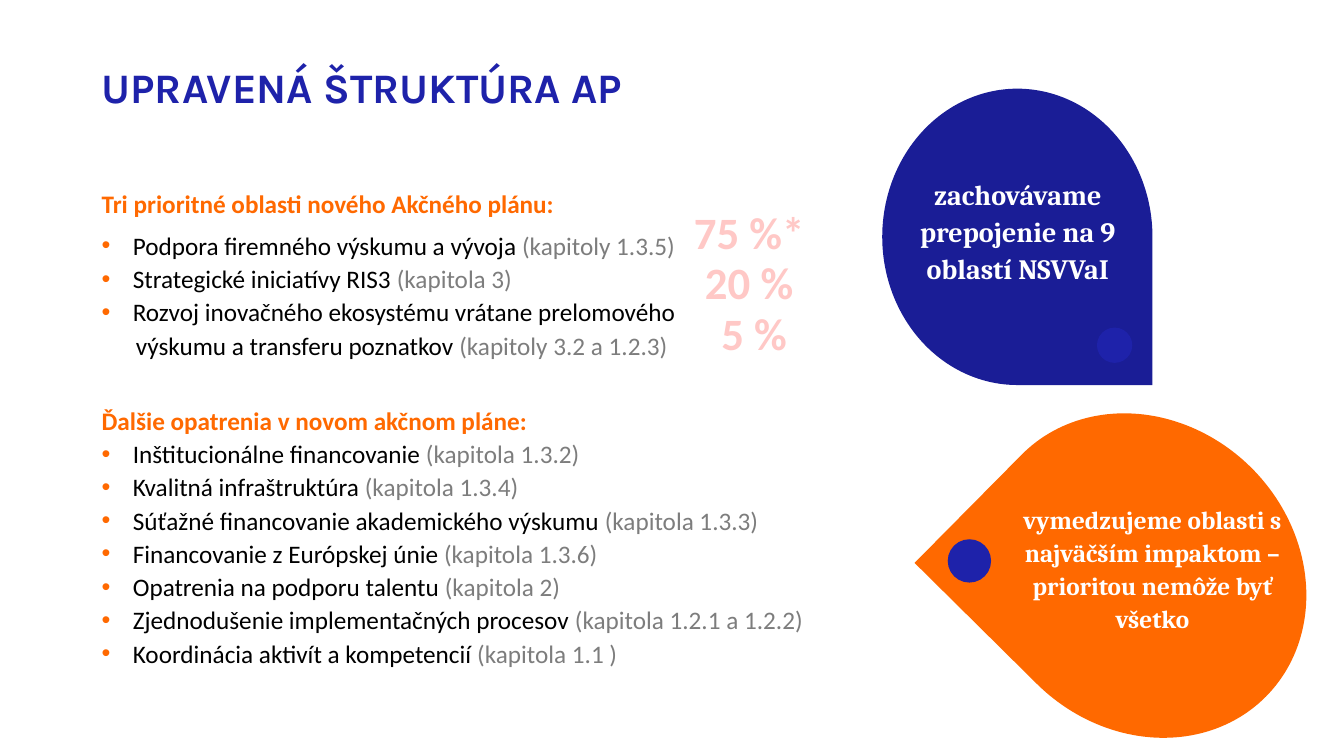
import dataclasses

import lxml.etree
import pptx
import pptx.dml.color
import pptx.enum.shapes
import pptx.enum.text
import pptx.oxml.ns
import pptx.util

PX = 9144  # EMU in one px, 100 px to the inch
ALIGN = pptx.enum.text.PP_ALIGN
ANCHOR = pptx.enum.text.MSO_ANCHOR
SHAPE = pptx.enum.shapes.MSO_SHAPE


@dataclasses.dataclass(frozen=True)
class Theme:
    blue: str = "1E22AA"
    navy: str = "1A1D96"
    orange: str = "FF6900"
    pink: str = "FFC8C6"
    grey: str = "7D7D7D"
    black: str = "000000"
    white: str = "FFFFFF"
    title_font: str = "Karla"
    body_font: str = "Calibri"
    drop_font: str = "Cambria"
    title_size: int = 30
    share_size: int = 32
    drop_size: int = 20
    body_size: int = 18


T = Theme()

PRIORITIES = [
    ("Podpora firemného výskumu a vývoja ", "(kapitoly 1.3.5)"),
    ("Strategické iniciatívy RIS3 ", "(kapitola 3)"),
    ("Rozvoj inovačného ekosystému vrátane prelomového", ""),
]
MEASURES = [
    ("Inštitucionálne financovanie ", "(kapitola 1.3.2)"),
    ("Kvalitná infraštruktúra ", "(kapitola 1.3.4)"),
    ("Súťažné financovanie akademického výskumu ", "(kapitola 1.3.3)"),
    ("Financovanie z Európskej únie ", "(kapitola 1.3.6)"),
    ("Opatrenia na podporu talentu ", "(kapitola 2)"),
    ("Zjednodušenie implementačných procesov ", "(kapitola 1.2.1 a 1.2.2)"),
    ("Koordinácia aktivít a kompetencií ", "(kapitola 1.1 )"),
]


def px(*lengths):
    return [pptx.util.Emu(n * PX) for n in lengths]


def rgb(color):
    return pptx.dml.color.RGBColor.from_string(color)


def add_frame(shapes, box, inset=(10, 5), anchor=ANCHOR.TOP):
    tf = shapes.add_textbox(*px(*box)).text_frame
    tf.word_wrap = True
    tf.vertical_anchor = anchor
    tf.margin_left = tf.margin_right = px(inset[0])[0]
    tf.margin_top = tf.margin_bottom = px(inset[1])[0]
    return tf


def add_paragraph(tf, align=ALIGN.LEFT, spacing=1.1, before=0, after=0,
                  indent=0, bullet=False):
    p = tf.paragraphs[0] if not tf.paragraphs[0].runs else tf.add_paragraph()
    p.alignment, p.line_spacing = align, spacing
    p.space_before, p.space_after = pptx.util.Pt(before), pptx.util.Pt(after)
    pPr = p._p.get_or_add_pPr()
    pPr.set("marL", str(indent * PX))
    pPr.set("indent", str(-indent * PX if bullet else 0))
    if bullet:
        qn = pptx.oxml.ns.qn
        color = lxml.etree.SubElement(pPr, qn("a:buClr"))
        lxml.etree.SubElement(color, qn("a:srgbClr"), val=T.orange)
        lxml.etree.SubElement(pPr, qn("a:buFont"), typeface="Arial")
        lxml.etree.SubElement(pPr, qn("a:buChar"), char="•")
    return p


def add_text(p, text, font=T.body_font, size=T.body_size, color=T.black, bold=False):
    r = p.add_run()
    r.text = text
    r.font.name, r.font.size, r.font.bold = font, pptx.util.Pt(size), bold
    r.font.color.rgb = rgb(color)


def add_solid(shapes, kind, box, color, rotation=0):
    sp = shapes.add_shape(kind, *px(*box))
    sp.shadow.inherit = False
    sp.fill.solid()
    sp.fill.fore_color.rgb = rgb(color)
    sp.line.fill.background()
    sp.rotation = rotation


def add_title(slide, box):
    p = add_paragraph(add_frame(slide.shapes, box, anchor=ANCHOR.MIDDLE), spacing=0.9)
    add_text(p, "UPRAVENÁ ŠTRUKTÚRA AP", font=T.title_font, size=T.title_size,
             color=T.blue, bold=True)


def add_item(tf, text, chapter, indent=31, bullet=True):
    p = add_paragraph(tf, indent=indent, bullet=bullet)
    add_text(p, text)
    if chapter:
        add_text(p, chapter, color=T.grey)


def add_body(slide, box):
    tf = add_frame(slide.shapes, box)
    # Priority areas
    add_text(add_paragraph(tf, after=6), "Tri prioritné oblasti nového Akčného plánu:",
             color=T.orange, bold=True)
    for text, chapter in PRIORITIES:
        add_item(tf, text, chapter)
    add_item(tf, "výskumu a transferu poznatkov ", "(kapitoly 3.2 a 1.2.3)",
             indent=34, bullet=False)
    # Further measures
    add_text(add_paragraph(tf, before=30), "Ďalšie opatrenia v novom akčnom pláne:",
             color=T.orange, bold=True)
    for text, chapter in MEASURES:
        add_item(tf, text, chapter)


def add_shares(slide, box, step=50):
    left, top, width, height = box
    for i, (share, shift) in enumerate([("75 %*", 0), ("20 %", 0), ("5 %", 5)]):
        tf = add_frame(slide.shapes, (left + shift, top + i * step, width, height))
        p = add_paragraph(tf, align=ALIGN.CENTER, spacing=1.0)
        add_text(p, share, size=T.share_size, color=T.pink, bold=True)


def add_drop(slide, box, text, color, rotation, dot, label, size):
    """Teardrop in box; dot and label are placed from its top left corner."""
    left, top = box[:2]
    shapes = slide.shapes.add_group_shape().shapes
    add_solid(shapes, SHAPE.TEAR, box, color, rotation)
    add_solid(shapes, SHAPE.OVAL, (left + dot[0], top + dot[1], dot[2], dot[2]), T.blue)
    tf = add_frame(shapes, (left + label[0], top + label[1], *label[2:]), inset=(0, 0))
    p = add_paragraph(tf, align=ALIGN.CENTER, after=6)
    add_text(p, text, font=T.drop_font, size=size, color=T.white, bold=True)


def main():
    prs = pptx.Presentation()
    prs.slide_width, prs.slide_height = px(1333, 750)
    slide = prs.slides.add_slide(prs.slide_layouts[6])

    # Title and lists
    add_title(slide, (91, 63, 901, 53))
    add_body(slide, (91, 179, 744, 492))

    # Teardrops
    add_drop(slide, (964, 420, 341, 302),
             "vymedzujeme oblasti s najväčším impaktom – prioritou nemôže byť všetko",
             T.orange, 224.7, dot=(-24, 115, 43), label=(51, 77, 256, 148),
             size=T.body_size)
    add_drop(slide, (862, 101, 294, 268),
             "zachovávame prepojenie na 9 oblastí NSVVaI",
             T.navy, 90, dot=(226, 224, 35), label=(42, 72, 211, 217),
             size=T.drop_size)

    # Shares of the priority areas
    add_shares(slide, (652, 198, 182, 64))
    prs.save("out.pptx")


if __name__ == "__main__":
    main()
